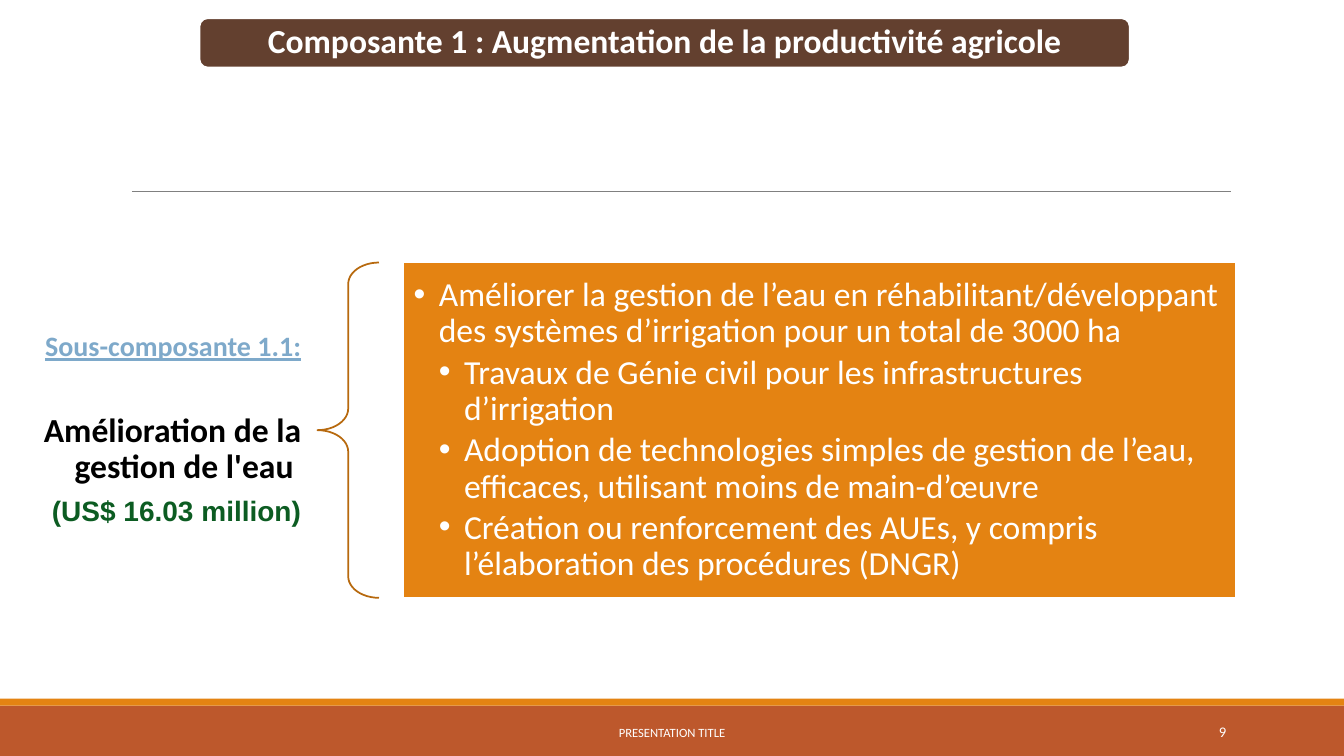
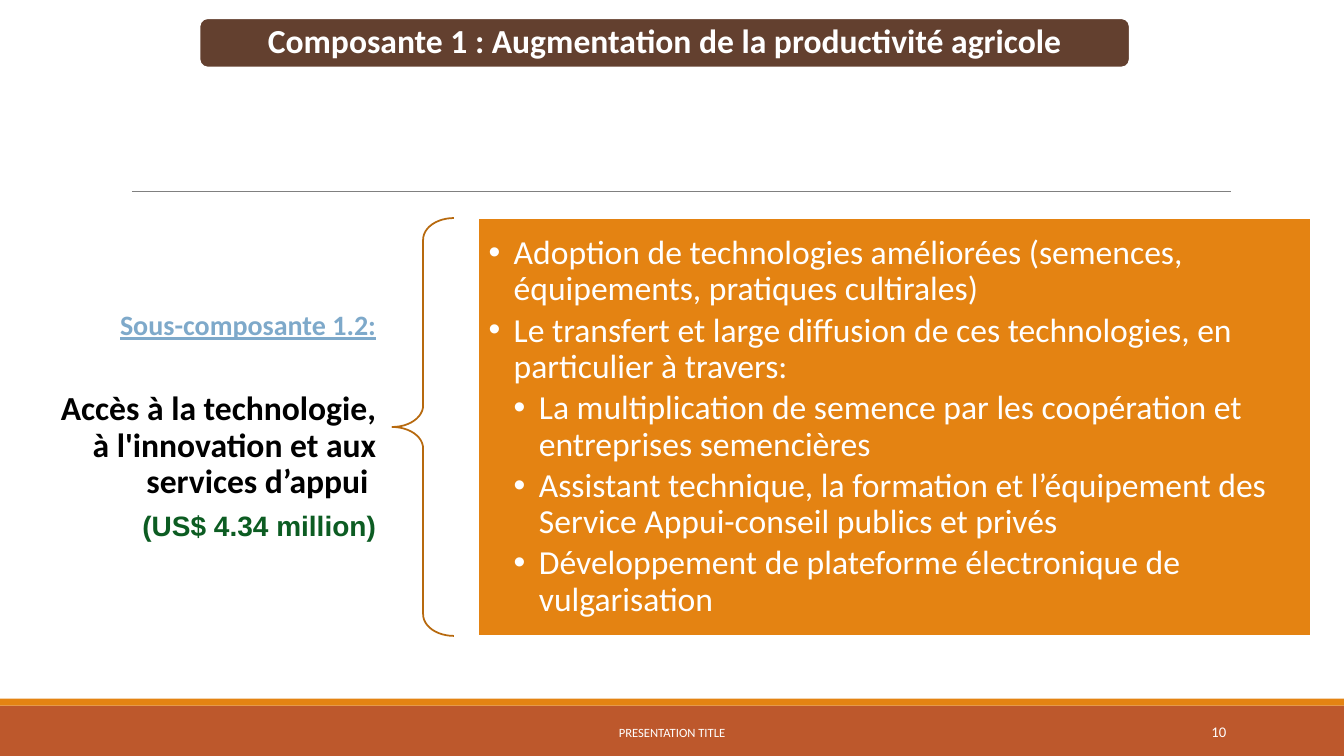
import lxml.etree
import pptx
import pptx.dml.color
import pptx.enum.shapes
import pptx.enum.text
import pptx.oxml.ns
import pptx.util

Pt = pptx.util.Pt
qn = pptx.oxml.ns.qn
SHAPE = pptx.enum.shapes.MSO_SHAPE
ALIGN = pptx.enum.text.PP_ALIGN

HUES = {
    "rust": "BD582C",
    "orange": "E48312",
    "brown": "63402F",
    "gray": "808080",
    "blue": "7EA9CA",
    "green": "0C5C22",
    "amber": "B7690E",
    "white": "FFFFFF",
    "black": "000000",
}
WIDE, HIGH = 960, 540
TITLE = "Composante 1 : Augmentation de la productivité agricole"
FOOT = "PRESENTATION TITLE"
FIRST = 9

PAGES = [
    {
        "left": -29.5, "top": 187.5, "high": 239.5, "tall": 155.5,
        "head": "Sous-composante 1.1:",
        "name": "Amélioration de la gestion de l'eau ",
        "cost": "(US$ 16.03 million)",
        "items": [
            (0, "Améliorer la gestion de l’eau en réhabilitant/développant des systèmes d’irrigation pour un total de 3000 ha"),
            (1, "Travaux de Génie civil pour les infrastructures d’irrigation"),
            (1, "Adoption de technologies simples de gestion de l’eau, efficaces, utilisant moins de main-d’œuvre"),
            (1, "Création ou renforcement des AUEs, y compris l’élaboration des procédures (DNGR)"),
        ],
    },
    {
        "left": 24, "top": 155.75, "high": 298.5, "tall": 180.5,
        "head": "Sous-composante 1.2:",
        "name": "Accès à la technologie, à l'innovation et aux services d’appui ",
        "cost": "(US$ 4.34 million)",
        "items": [
            (0, "Adoption de technologies améliorées (semences, équipements, pratiques cultirales)"),
            (0, "Le transfert et large diffusion de ces technologies, en particulier à travers:"),
            (1, "La multiplication de semence par les coopération et entreprises semencières"),
            (1, "Assistant technique, la formation et l’équipement des Service Appui-conseil publics et privés"),
            (1, "Développement de plateforme électronique de vulgarisation"),
        ],
    },
]


def tint(name):
    return pptx.dml.color.RGBColor.from_string(HUES[name])


def place(shape, left, top, wide, high):
    shape.left, shape.top = Pt(left), Pt(top)
    shape.width, shape.height = Pt(wide), Pt(high)


def paint(shape, fill=None, line=None):
    if fill:
        shape.fill.solid()
        shape.fill.fore_color.rgb = tint(fill)
    else:
        shape.fill.background()
    if line:
        shape.line.color.rgb = tint(line)
        shape.line.width = Pt(1.25)
    else:
        shape.line.fill.background()


def draw(slide, kind, box, fill=None, line=None):
    shape = slide.shapes.add_shape(kind, *map(Pt, box))
    shape.shadow.inherit = False
    paint(shape, fill, line)
    return shape


def frame(shape, side=7.2, edge=7.2):
    text = shape.text_frame
    text.word_wrap = True
    text.auto_size = pptx.enum.text.MSO_AUTO_SIZE.NONE
    text.vertical_anchor = pptx.enum.text.MSO_ANCHOR.MIDDLE
    text.margin_left = text.margin_right = Pt(side)
    text.margin_top = text.margin_bottom = Pt(edge)
    return text


def box(slide, area, side=7.2, edge=3.6):
    return frame(slide.shapes.add_textbox(*map(Pt, area)), side, edge)


def line(text, index, align, after=0, space=0.9):
    para = text.add_paragraph() if index else text.paragraphs[0]
    para.alignment = align
    para.line_spacing = space
    para.space_before = Pt(0)
    para.space_after = Pt(after)
    return para


def write(para, words, size, hue, font="Calibri", bold=False, under=False):
    run = para.add_run()
    run.text = words
    run.font.name = font
    run.font.size = Pt(size)
    run.font.bold = bold
    run.font.underline = under
    run.font.color.rgb = tint(hue)
    return run


def dot(para, level):
    para.level = level
    props = para._p.get_or_add_pPr()
    props.set("marL", str(Pt(18 * (level + 1))))
    props.set("indent", str(Pt(-18)))
    lxml.etree.SubElement(props, qn("a:buFont")).set("typeface", "Arial")
    lxml.etree.SubElement(props, qn("a:buChar")).set("char", "•")


def count(run):
    node = run._r
    node.tag = qn("a:fld")
    node.set("id", "{B6F15528-21DE-4FAA-801E-634DDDAF4B2B}")
    node.set("type", "slidenum")


def base(slide, page):
    draw(slide, SHAPE.RECTANGLE, (0, 504, WIDE, 36), "rust")
    draw(slide, SHAPE.RECTANGLE, (0, 499, WIDE, 5), "orange")
    rule = slide.shapes.add_connector(
        pptx.enum.shapes.MSO_CONNECTOR.STRAIGHT,
        Pt(94.3), Pt(136.6), Pt(879), Pt(136.6))
    rule.line.color.rgb = tint("gray")
    rule.line.width = Pt(0.5)
    lxml.etree.SubElement(rule._element.spPr, qn("a:effectLst"))
    foot = box(slide, (290, 508.5, 380, 28.75))
    write(line(foot, 0, ALIGN.CENTER, space=1), FOOT, 9, "white")
    mark = box(slide, (780, 508.5, 103, 28.75))
    count(write(line(mark, 0, ALIGN.RIGHT, space=1), str(page), 10.5, "white"))


def banner(slide, left, top, wide, high):
    draw(slide, SHAPE.ROUNDED_RECTANGLE, (left, top, wide, high), "brown", "white")
    title = slide.shapes.title
    slide.shapes._spTree.append(title._element)
    place(title, left + 1.75, top + 1.75, wide - 3.5, high - 3.5)
    para = line(frame(title), 0, ALIGN.CENTER)
    write(para, TITLE, 24, "white", bold=True)


def label(slide, area, data):
    text = box(slide, area, 11.5, 4.5)
    rows = [
        (data["head"], 20, "blue", "Calibri", True, 36),
        (data["name"], 24, "black", "Calibri", False, 8.4),
        (data["cost"], 20, "green", "Arial", False, 7),
    ]
    for index, (words, size, hue, font, under, after) in enumerate(rows):
        para = line(text, index, ALIGN.RIGHT, after)
        write(para, words, size, hue, font, True, under)


def panel(slide, area, items):
    body = slide.placeholders[1]
    place(body, *area)
    paint(body, "orange", "white")
    text = frame(body)
    for index, (level, words) in enumerate(items):
        para = line(text, index, ALIGN.LEFT, 3.6)
        dot(para, level)
        write(para, words, 24, "white")


def group(slide, data):
    left, top, high, tall = (data[key] for key in ("left", "top", "high", "tall"))
    label(slide, (left, top + (high - tall) / 2, 256.25, tall), data)
    left += 256.25
    brace = draw(slide, SHAPE.LEFT_BRACE, (left, top, 44, high), line="amber")
    brace.adjustments[0] = 0.35
    brace.adjustments[1] = 0.5
    panel(slide, (left + 61.5, top, 594.5, high), data["items"])


def main():
    deck = pptx.Presentation()
    deck.slide_width, deck.slide_height = Pt(WIDE), Pt(HIGH)
    deck.element.set("firstSlideNum", str(FIRST))
    for page, data in enumerate(PAGES, FIRST):
        slide = deck.slides.add_slide(deck.slide_layouts[1])
        base(slide, page)
        banner(slide, 142.5, 13, 664.5, 35.25)
        group(slide, data)
    deck.save("out.pptx")


if __name__ == "__main__":
    main()
